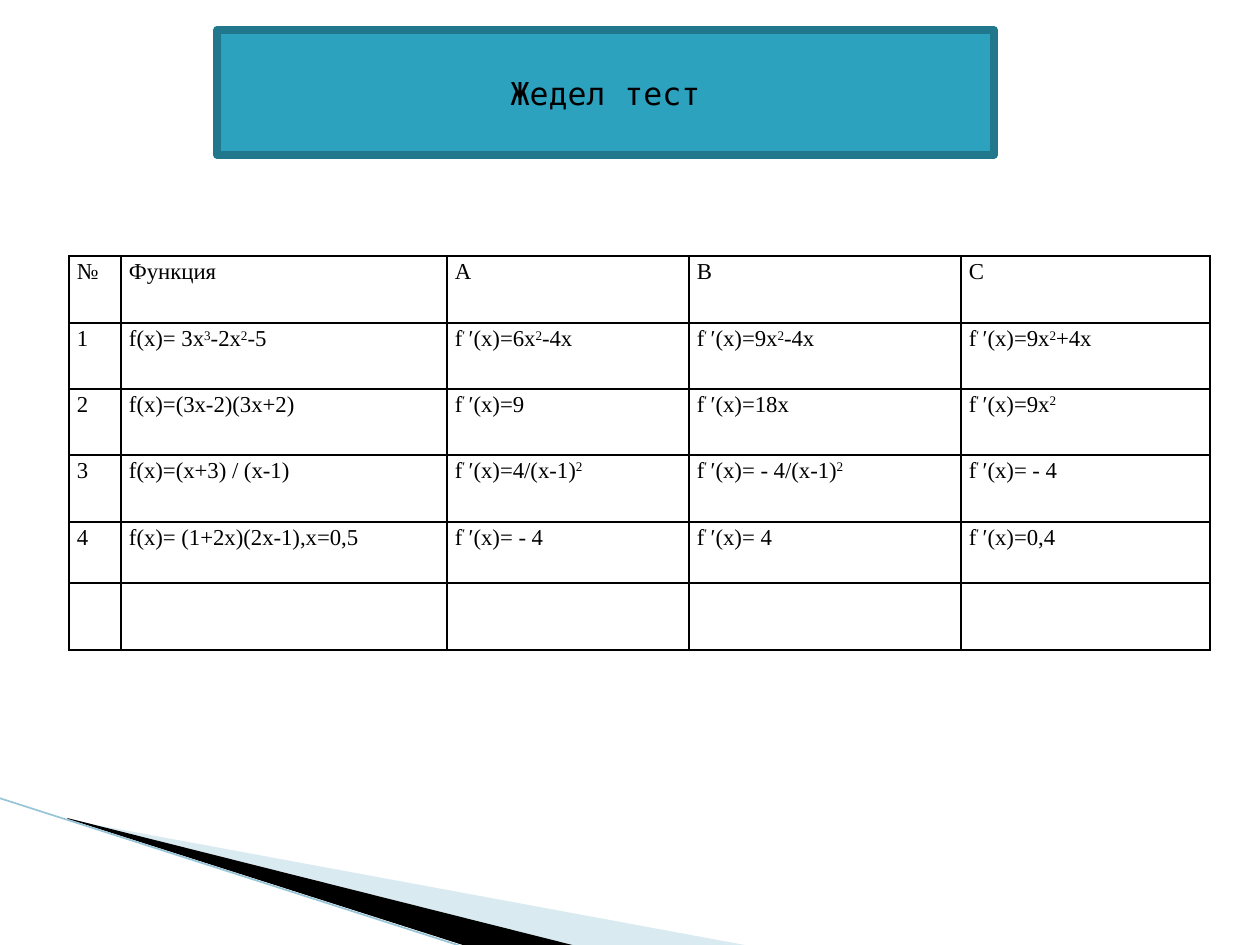
import dataclasses

import lxml.etree
import pptx
import pptx.dml.color
import pptx.enum.shapes
import pptx.enum.text
import pptx.oxml.ns
import pptx.util

EMU_PER_PX = 914400 / 126


@dataclasses.dataclass(frozen=True)
class Theme:
    banner: str = "2DA2BF"
    banner_edge: str = "21788D"
    ink: str = "000000"
    wedge: str = "A0CBDC"
    edge: str = "97C5D8"
    title_font: str = "DejaVu Sans Mono"
    table_font: str = "Times New Roman"
    title_size: int = 18
    table_size: int = 13


def px(length):
    return pptx.util.Emu(round(length * EMU_PER_PX))


def rgb(value):
    return pptx.dml.color.RGBColor.from_string(value)


def sub(parent, tag, **attributes):
    return lxml.etree.SubElement(parent, pptx.oxml.ns.qn(tag), attributes)


def write(frame, text, *, font, size, color, align=None, spacing=None):
    """Fill a frame with one paragraph; text between ^ marks is superscript."""
    paragraph = frame.paragraphs[0]
    paragraph.alignment = align
    paragraph.line_spacing = spacing
    paragraph.font.size = pptx.util.Pt(size)
    for index, part in enumerate(text.split("^")):
        if not part:
            continue
        run = paragraph.add_run()
        run.text = part
        run.font.name = font
        run.font.size = pptx.util.Pt(size)
        run.font.color.rgb = rgb(color)
        if index % 2:
            run._r.get_or_add_rPr().set("baseline", "30000")


class SlideBuilder:
    def __init__(self, slide, theme):
        self.slide = slide
        self.theme = theme

    def wedge(self, frame, points, color, opacity=100):
        """Draw an outline whose points may lie outside the shape's frame."""
        builder = self.slide.shapes.build_freeform(*points[0], scale=EMU_PER_PX)
        builder.add_line_segments(points[1:], close=True)
        shape = builder.convert_to_shape()
        left, top, width, height = map(px, frame)
        shift_x, shift_y = shape.left - left, shape.top - top
        scale = EMU_PER_PX
        outline = shape._element.spPr.find(".//" + pptx.oxml.ns.qn("a:path"))
        outline.set("w", str(width))
        outline.set("h", str(height))
        for point, (x, y) in zip(outline.iter(pptx.oxml.ns.qn("a:pt")), points):
            point.set("x", str(round(x * scale) - left))
            point.set("y", str(round(y * scale) - top))
        shape.left, shape.top, shape.width, shape.height = left, top, width, height
        shape.shadow.inherit = False
        shape.fill.solid()
        shape.fill.fore_color.rgb = rgb(color)
        shape.line.fill.background()
        if opacity < 100:
            tint = shape.fill._xPr.find(".//" + pptx.oxml.ns.qn("a:srgbClr"))
            sub(tint, "a:alpha", val=str(opacity * 1000))

    def line(self, start, end, color, width):
        connector = self.slide.shapes.add_connector(
            pptx.enum.shapes.MSO_CONNECTOR.STRAIGHT, *map(px, start + end))
        connector.line.color.rgb = rgb(color)
        connector.line.width = pptx.util.Pt(width)
        sub(connector._element.spPr, "a:effectLst")

    def banner(self, box, text):
        shape = self.slide.shapes.add_shape(
            pptx.enum.shapes.MSO_SHAPE.RECTANGLE, *map(px, box))
        shape.shadow.inherit = False
        shape.fill.solid()
        shape.fill.fore_color.rgb = rgb(self.theme.banner)
        shape.line.color.rgb = rgb(self.theme.banner_edge)
        shape.line.width = pptx.util.Pt(4.33)
        shape.text_frame.vertical_anchor = pptx.enum.text.MSO_ANCHOR.MIDDLE
        write(shape.text_frame, text, font=self.theme.title_font,
              size=self.theme.title_size, color=self.theme.ink,
              align=pptx.enum.text.PP_ALIGN.CENTER)

    def table(self, left, top, widths, heights, rows):
        table = self.slide.shapes.add_table(
            len(heights), len(widths), px(left), px(top),
            px(sum(widths)), px(sum(heights))).table
        table.first_row = table.horz_banding = False
        for column, width in zip(table.columns, widths):
            column.width = px(width)
        for row, height, texts in zip(table.rows, heights, rows):
            row.height = px(height)
            for cell, text in zip(row.cells, texts):
                self.cell(cell, text)

    def cell(self, cell, text):
        cell.margin_left = cell.margin_right = px(8)
        cell.margin_top = cell.margin_bottom = 0
        write(cell.text_frame, text, font=self.theme.table_font,
              size=self.theme.table_size, color=self.theme.ink, spacing=1.15)
        properties = cell._tc.get_or_add_tcPr()
        for side in ("a:lnL", "a:lnR", "a:lnT", "a:lnB"):
            border = sub(properties, side, w=str(pptx.util.Pt(1)))
            sub(sub(border, "a:solidFill"), "a:srgbClr", val=self.theme.ink)
        cell.fill.background()


def derivative(value):
    return "f^ʹ ^ʹ(х)=" + value


def main():
    theme = Theme()
    deck = pptx.Presentation()
    deck.slide_width, deck.slide_height = px(1260), px(945)
    page = SlideBuilder(deck.slides.add_slide(deck.slide_layouts[6]), theme)

    # Corner decoration
    page.wedge((98, 689, 524, 199),
               [(69, 820), (750, 946), (575, 946), (69, 819)], theme.wedge, opacity=40)
    page.wedge((-8, 798, 524, 116),
               [(67, 818), (576, 946), (469, 947), (68, 819)], theme.ink)
    page.line((-1, 798), (467, 948), theme.edge, 0.95)

    # Title
    page.banner((217, 30, 777, 125), "Жедел тест")

    # Test questions: function and its three candidate derivatives
    questions = [
        ("f(х)= 3х^3^-2х^2^-5", "6х^2^-4х", "9х^2^-4х", "9х^2^+4х"),
        ("f(х)=(3х-2)(3х+2)", "9", "18х", "9х^2^"),
        ("f(х)=(х+3) / (х-1)", "4/(х-1)^2^", " - 4/(х-1)^2^", " - 4"),
        ("f(х)= (1+2х)(2х-1),х=0,5", " - 4", " 4", "0,4"),
    ]
    header = ["№", "Функция", "А", "В", "С"]
    body = [[str(number), function, *map(derivative, answers)]
            for number, (function, *answers) in enumerate(questions, 1)]
    empty = [""] * len(header)
    page.table(69, 256, widths=[52, 326, 242, 272, 249],
               heights=[67, 66, 66, 67, 61, 67], rows=[header, *body, empty])

    deck.save("out.pptx")


if __name__ == "__main__":
    main()
